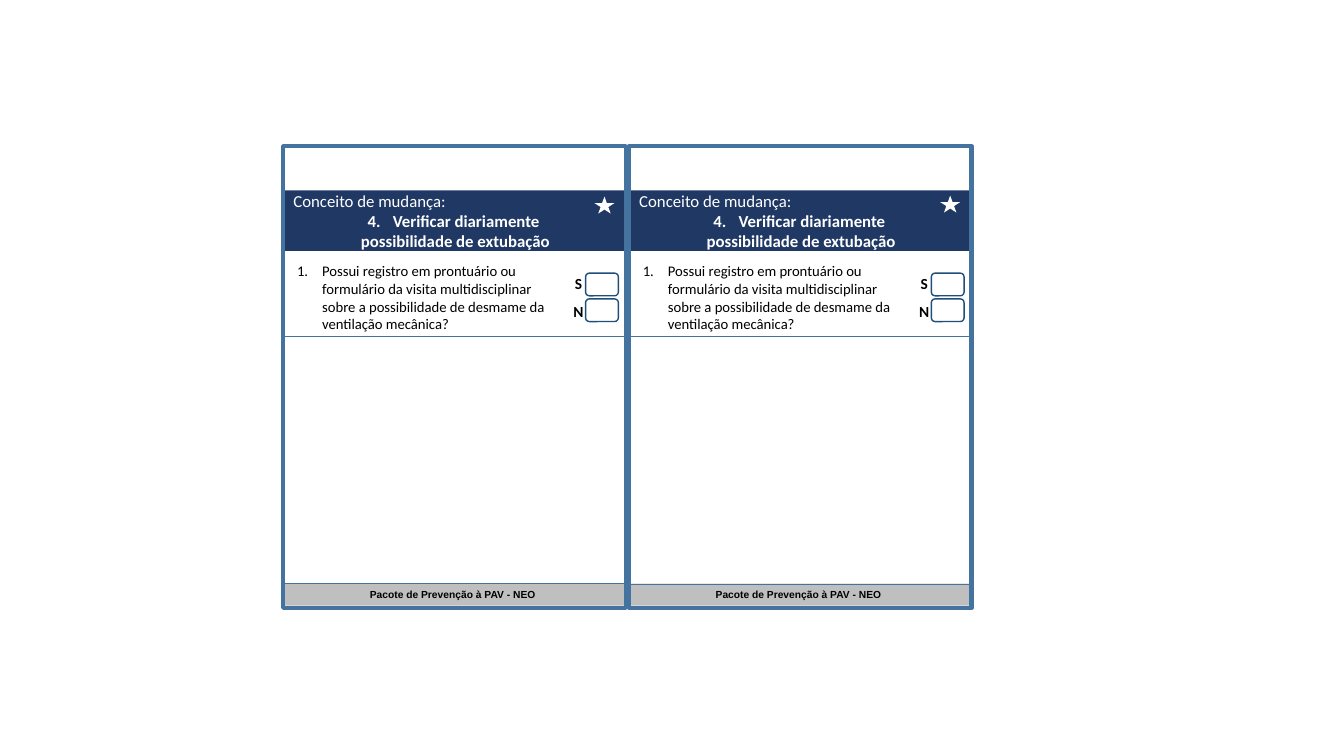
import pptx
import pptx.util
import pptx.dml.color
import pptx.enum.shapes
import pptx.enum.text
import pptx.oxml.ns
from lxml import etree

Pt = pptx.util.Pt
RGB = pptx.dml.color.RGBColor.from_string
KIND = pptx.enum.shapes.MSO_SHAPE
ALIGN = pptx.enum.text.PP_ALIGN
qn = pptx.oxml.ns.qn

COLORS = {"navy": "203864", "steel": "43739E", "box": "1F4E79",
          "gray": "BFBFBF", "white": "FFFFFF", "black": "000000"}
STEP = 246.96
LEFTS = [0, STEP]

deck = pptx.Presentation()
deck.slide_width, deck.slide_height = Pt(960), Pt(540)
slide = deck.slides.add_slide(deck.slide_layouts[6])
shapes = slide.shapes


def draw(kind, x, y, w, h, fill=None, line=None, width=1, lines=(), inset=7.2):
    """Add a shape; each of lines is (text, size, font, color, bold, align, number)."""
    if kind:
        shape = shapes.add_shape(kind, Pt(x), Pt(y), Pt(w), Pt(h))
        shape.shadow.inherit = False
    else:
        shape = shapes.add_textbox(Pt(x), Pt(y), Pt(w), Pt(h))
    if fill:
        shape.fill.solid()
        shape.fill.fore_color.rgb = RGB(COLORS[fill])
    else:
        shape.fill.background()
    if line:
        shape.line.color.rgb = RGB(COLORS[line])
        shape.line.width = Pt(width)
    else:
        shape.line.fill.background()

    frame = shape.text_frame
    frame.word_wrap = True
    frame.vertical_anchor = pptx.enum.text.MSO_ANCHOR.MIDDLE
    frame.margin_left = frame.margin_right = Pt(inset)
    frame.margin_top = frame.margin_bottom = 0
    for i, (text, size, font, color, bold, align, number) in enumerate(lines):
        para = frame.add_paragraph() if i else frame.paragraphs[0]
        para.text = text
        para.alignment = align
        para.font.size = Pt(size)
        para.font.name = font
        para.font.bold = bold
        para.font.color.rgb = RGB(COLORS[color])
        if number:
            props = para._p.get_or_add_pPr()
            props.set("marL", str(Pt(18)))
            props.set("indent", str(-Pt(18)))
            mark = etree.Element(qn("a:buAutoNum"), type="arabicPeriod", startAt=str(number))
            props.insert(0, mark)


def rule(x, y, w):
    line = shapes.add_connector(pptx.enum.shapes.MSO_CONNECTOR.STRAIGHT,
                                Pt(x), Pt(y), Pt(x + w), Pt(y))
    line.line.color.rgb = RGB(COLORS["steel"])
    line.line.width = Pt(1)
    etree.SubElement(line._element.spPr, qn("a:effectLst"))


# Footers
for left in LEFTS:
    draw(KIND.RECTANGLE, left + 200.9, 416.9, 244.8, 15.8, fill="gray", lines=[
        ("Pacote de Prevenção à PAV - NEO", 7.3, "Arial", "black", True, ALIGN.CENTER, 0)])

# Cards
title = [
    ("Conceito de mudança:", 12, "Calibri", "white", False, ALIGN.LEFT, 0),
    ("Verificar diariamente ", 12, "Calibri", "white", True, ALIGN.CENTER, 4),
    ("possibilidade de extubação", 12, "Calibri", "white", True, ALIGN.CENTER, 0),
]
question = [("Possui registro em prontuário ou formulário da visita multidisciplinar "
             "sobre a possibilidade de desmame da ventilação mecânica?",
             10.5, "Calibri", "black", False, ALIGN.LEFT, 1)]
for left in LEFTS:
    draw(KIND.RECTANGLE, left + 203, 136.1, 244.8, 43.2, fill="navy", lines=title, inset=6.6)
    draw(None, left + 205.6, 189.4, 201.6, 46.1, lines=question, inset=6.6)
    for top in (195.1, 213.5):
        draw(KIND.ROUNDED_RECTANGLE, left + 418.3, top, 23.4, 16.2, line="box")
    for letter, top in (("S", 196.6), ("N", 216)):
        draw(None, left + 404.6, top, 17.3, 12.2, inset=0, lines=[
            (letter, 11, "Calibri", "black", True, ALIGN.CENTER, 0)])
    draw(KIND.RECTANGLE, left + 202.3, 104.4, 244.8, 329.8, line="steel", width=3)
    rule(left + 202.3, 240.5, 244.1)

# Stars and footer rules
for left, star, base in zip(LEFTS, (140.4, 139.7), (416.9, 417.6)):
    draw(KIND.STAR_5_POINT, left + 424.6, star, 14.4, 12.2, fill="white")
    rule(left + 201.4, base, 247.7)

deck.save("out.pptx")
